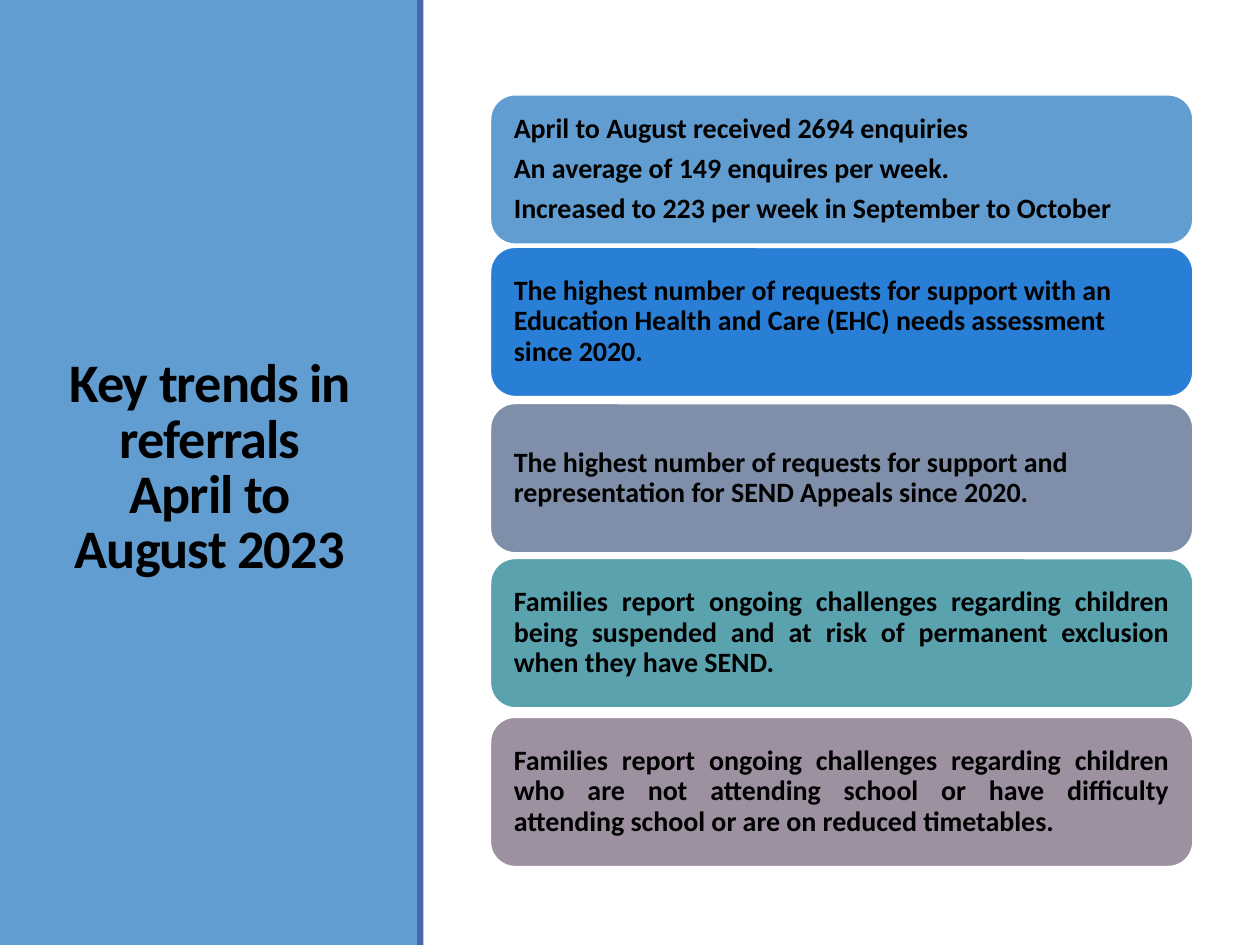
"""Build the slide on key trends in referrals, April to August 2023."""
from pptx import Presentation
from pptx.dml.color import RGBColor
from pptx.enum.shapes import MSO_SHAPE
from pptx.enum.text import MSO_ANCHOR, MSO_AUTO_SIZE, PP_ALIGN
from pptx.util import Inches, Pt

RECT, ROUND = MSO_SHAPE.RECTANGLE, MSO_SHAPE.ROUNDED_RECTANGLE
LEFT, CENTER, JUST = PP_ALIGN.LEFT, PP_ALIGN.CENTER, PP_ALIGN.JUSTIFY
MIDDLE, FIXED = MSO_ANCHOR.MIDDLE, MSO_AUTO_SIZE.NONE

COLORS = {
    "panel": "629DD1", "edge": "4A66AC", "text": "000000", "line": "FFFFFF",
    "blue": "297FD5", "slate": "7F8FA9", "teal": "5AA2AE", "mauve": "9D90A0",
}
CARDS = [
    (0.75, "panel", LEFT, "April to August received 2694 enquiries\n"
     "An average of 149 enquires per week.\n"
     "Increased to 223 per week in September to October"),
    (1.96, "blue", LEFT, "The highest number of requests for support with an "
     "Education Health and Care (EHC) needs assessment since 2020."),
    (3.2, "slate", LEFT, "The highest number of requests for support and "
     "representation for SEND Appeals since 2020."),
    (4.43, "teal", JUST, "Families report ongoing challenges regarding children "
     "being suspended and at risk of permanent exclusion when they have SEND."),
    (5.69, "mauve", JUST, "Families report ongoing challenges regarding children "
     "who are not attending school or have difficulty attending school "
     "or are on reduced timetables."),
]


def add_box(kind, left, top, width, height, color):
    box = slide.shapes.add_shape(
        kind, Inches(left), Inches(top), Inches(width), Inches(height))
    box.shadow.inherit = False
    box.fill.solid()
    box.fill.fore_color.rgb = RGBColor.from_string(COLORS[color])
    box.line.fill.background()
    return box


def set_text(shape, text, size, align, space, pad):
    frame = shape.text_frame
    frame.text = text
    frame.word_wrap = True
    frame.auto_size = FIXED
    frame.vertical_anchor = MIDDLE
    frame.margin_left = frame.margin_right = Inches(pad)
    for para in frame.paragraphs:
        para.alignment = align
        para.line_spacing = space
        for run in para.runs:
            run.font.name = "Calibri"
            run.font.size = Pt(size)
            run.font.bold = True
            run.font.color.rgb = RGBColor.from_string(COLORS["text"])


prs = Presentation()
prs.slide_width, prs.slide_height = Inches(10), Inches(7.5)
slide = prs.slides.add_slide(prs.slide_layouts[5])

add_box(RECT, 0, 0, 3.32, 7.5, "panel")
add_box(RECT, 3.31, 0, 0.05, 7.5, "edge")

title = slide.shapes.title
title.left, title.top = Inches(0.4), Inches(0.57)
title.width, title.height = Inches(2.53), Inches(6.31)
set_text(title, "Key trends in referrals April to August 2023", 31, CENTER, 0.85, 0.13)
for run in title.text_frame.paragraphs[0].runs:
    run.font._element.set("spc", "-50")
slide.shapes._spTree.append(title._element)

for top, color, align, text in CARDS:
    card = add_box(ROUND, 3.89, top, 5.58, 1.19, color)
    card.line.color.rgb = RGBColor.from_string(COLORS["line"])
    card.line.width = Pt(1.25)
    set_text(card, text, 16, align, 0.9, 0.13)
    for para in card.text_frame.paragraphs:
        para.space_after = Pt(5.6)

prs.save("out.pptx")
